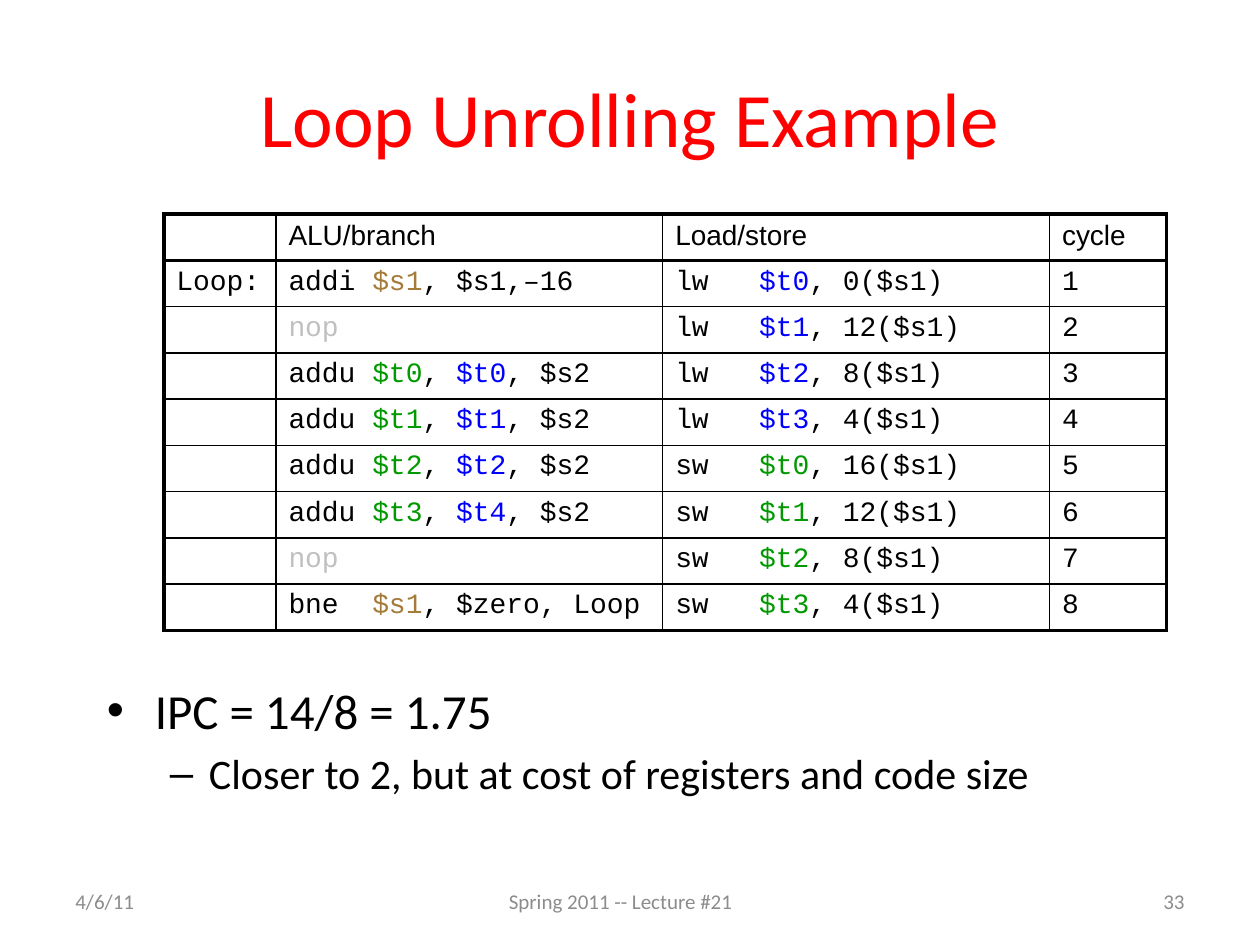
"""Build the loop unrolling slide with its two-issue schedule table."""
from lxml.etree import SubElement
from pptx import Presentation
from pptx.dml.color import RGBColor
from pptx.enum.text import MSO_ANCHOR as Anchor, PP_ALIGN as Align
from pptx.oxml.ns import qn
from pptx.util import Inches, Pt

BLACK = RGBColor(0x00, 0x00, 0x00)
RED = RGBColor(0xFF, 0x00, 0x00)
BLUE = RGBColor(0x00, 0x00, 0xFF)
GREEN = RGBColor(0x00, 0x99, 0x00)
BROWN = RGBColor(0xA4, 0x7B, 0x38)
SILVER = RGBColor(0xC0, 0xC0, 0xC0)
GRAY = RGBColor(0x8C, 0x8C, 0x8C)

BODY_FONT, HEAD_FONT, CODE_FONT = "Calibri", "Arial", "Courier New"
TABLE_SIZE = 16
HEADINGS = ["", "ALU/branch", "Load/store", "cycle"]
COLUMN_WIDTHS = [0.89, 3.07, 3.07, 0.93]
ROW_HEIGHT = 0.35
SCHEDULE = [
    ("addi |$s1|, $s1,–16", "lw   |$t0|, 0($s1)"),
    ("|nop|", "lw   |$t1|, 12($s1)"),
    ("addu |$t0|, |$t0|, $s2", "lw   |$t2|, 8($s1)"),
    ("addu |$t1|, |$t1|, $s2", "lw   |$t3|, 4($s1)"),
    ("addu |$t2|, |$t2|, $s2", "sw   |$t0|, 16($s1)"),
    ("addu |$t3|, |$t4|, $s2", "sw   |$t1|, 12($s1)"),
    ("|nop|", "sw   |$t2|, 8($s1)"),
    ("bne  |$s1|, $zero, Loop", "sw   |$t3|, 4($s1)"),
]
MARK_COLORS = {
    "addi": [BROWN], "bne": [BROWN], "addu": [GREEN, BLUE],
    "lw": [BLUE], "sw": [GREEN], "nop": [SILVER],
}


def add_span(para, text, size, font, color):
    """Append one formatted run to a paragraph."""
    span = para.add_run()
    span.text = text
    span.font.size = Pt(size)
    span.font.name = font
    span.font.color.rgb = color


def add_code(para, code):
    """Add an instruction whose marked operands take the operation's colours."""
    operation = code.replace("|", "").split()[0] if code else ""
    colors = iter(MARK_COLORS.get(operation, []))
    for index, part in enumerate(code.split("|")):
        color = next(colors) if index % 2 else BLACK
        if part:
            add_span(para, part, TABLE_SIZE, CODE_FONT, color)


def set_borders(cell, widths):
    """Draw the cell's borders from a mapping of side to points."""
    properties = cell._tc.get_or_add_tcPr()
    for side, width in widths.items():
        line = SubElement(properties, qn(f"a:ln{side}"), w=str(Pt(width)))
        fill = SubElement(line, qn("a:solidFill"))
        SubElement(fill, qn("a:srgbClr"), val=str(BLACK))


def add_title(page, text):
    """Place and fill the title placeholder."""
    title = page.shapes.title
    title.left, title.top = Inches(0.5), Inches(0.3)
    title.width, title.height = Inches(9), Inches(1.25)
    title.text_frame.vertical_anchor = Anchor.MIDDLE
    para = title.text_frame.paragraphs[0]
    para.alignment = Align.CENTER
    add_span(para, text, 44, BODY_FONT, RED)


def add_schedule(page):
    """Add the schedule table with a heavy frame and a ruled heading."""
    rows = [HEADINGS]
    for cycle, (alu, memory) in enumerate(SCHEDULE, 1):
        rows.append(["Loop:" if cycle == 1 else "", alu, memory, str(cycle)])
    last_row, last_column = len(rows) - 1, len(HEADINGS) - 1
    table = page.shapes.add_table(
        len(rows), len(HEADINGS), Inches(1.3), Inches(1.7),
        Inches(sum(COLUMN_WIDTHS)), Inches(ROW_HEIGHT * len(rows))).table
    table.first_row = table.horz_banding = False
    for column, width in zip(table.columns, COLUMN_WIDTHS):
        column.width = Inches(width)
    for r, texts in enumerate(rows):
        table.rows[r].height = Inches(ROW_HEIGHT)
        for c, text in enumerate(texts):
            cell = table.cell(r, c)
            set_borders(cell, {
                "L": 2.25 if c == 0 else 1,
                "R": 2.25 if c == last_column else 1,
                "T": {0: 2.25, 1: 1.5}.get(r, 1),
                "B": {0: 1.5, last_row: 2.25}.get(r, 1),
            })
            cell.fill.background()
            para = cell.text_frame.paragraphs[0]
            if not text:
                SubElement(para._p, qn("a:endParaRPr"), sz=str(TABLE_SIZE * 100))
            elif r == 0:
                add_span(para, text, TABLE_SIZE, HEAD_FONT, BLACK)
            elif c in (1, 2):
                add_code(para, text)
            else:
                add_span(para, text, TABLE_SIZE, CODE_FONT, BLACK)


def add_bullet(para, text, size, mark, level, indent, hang):
    """Format a paragraph as a hanging bullet."""
    para.level = level
    para.space_before = Pt(size * 0.2)
    properties = para._p.get_or_add_pPr()
    properties.set("marL", str(Inches(indent)))
    properties.set("indent", str(Inches(-hang)))
    SubElement(properties, qn("a:buFont"), typeface="Arial")
    SubElement(properties, qn("a:buChar"), char=mark)
    add_span(para, text, size, BODY_FONT, BLACK)


def add_box(page, left, top, width, height):
    """Add a wrapping text box and return its text frame."""
    box = page.shapes.add_textbox(
        Inches(left), Inches(top), Inches(width), Inches(height))
    box.text_frame.word_wrap = True
    return box.text_frame


def add_footer(page, left, text, align):
    """Add one footer item."""
    frame = add_box(page, left, 6.95, 2.33, 0.4)
    frame.vertical_anchor = Anchor.MIDDLE
    para = frame.paragraphs[0]
    para.alignment = align
    add_span(para, text, 12, BODY_FONT, GRAY)


def main():
    """Assemble and save the slide."""
    deck = Presentation()
    deck.slide_width, deck.slide_height = Inches(10), Inches(7.5)
    page = deck.slides.add_slide(deck.slide_layouts[5])
    add_title(page, "Loop Unrolling Example")
    body = add_box(page, 0.75, 5.35, 9.05, 1.47)
    add_bullet(body.paragraphs[0], "IPC = 14/8 = 1.75", 28, "•", 0, 0.38, 0.38)
    add_bullet(body.add_paragraph(),
               "Closer to 2, but at cost of registers and code size",
               24, "–", 1, 0.81, 0.31)
    add_schedule(page)
    add_footer(page, 0.5, "4/6/11", Align.LEFT)
    add_footer(page, 3.94, "Spring 2011 -- Lecture #21", Align.LEFT)
    add_footer(page, 7.17, "33", Align.RIGHT)
    deck.save("out.pptx")


if __name__ == "__main__":
    main()
